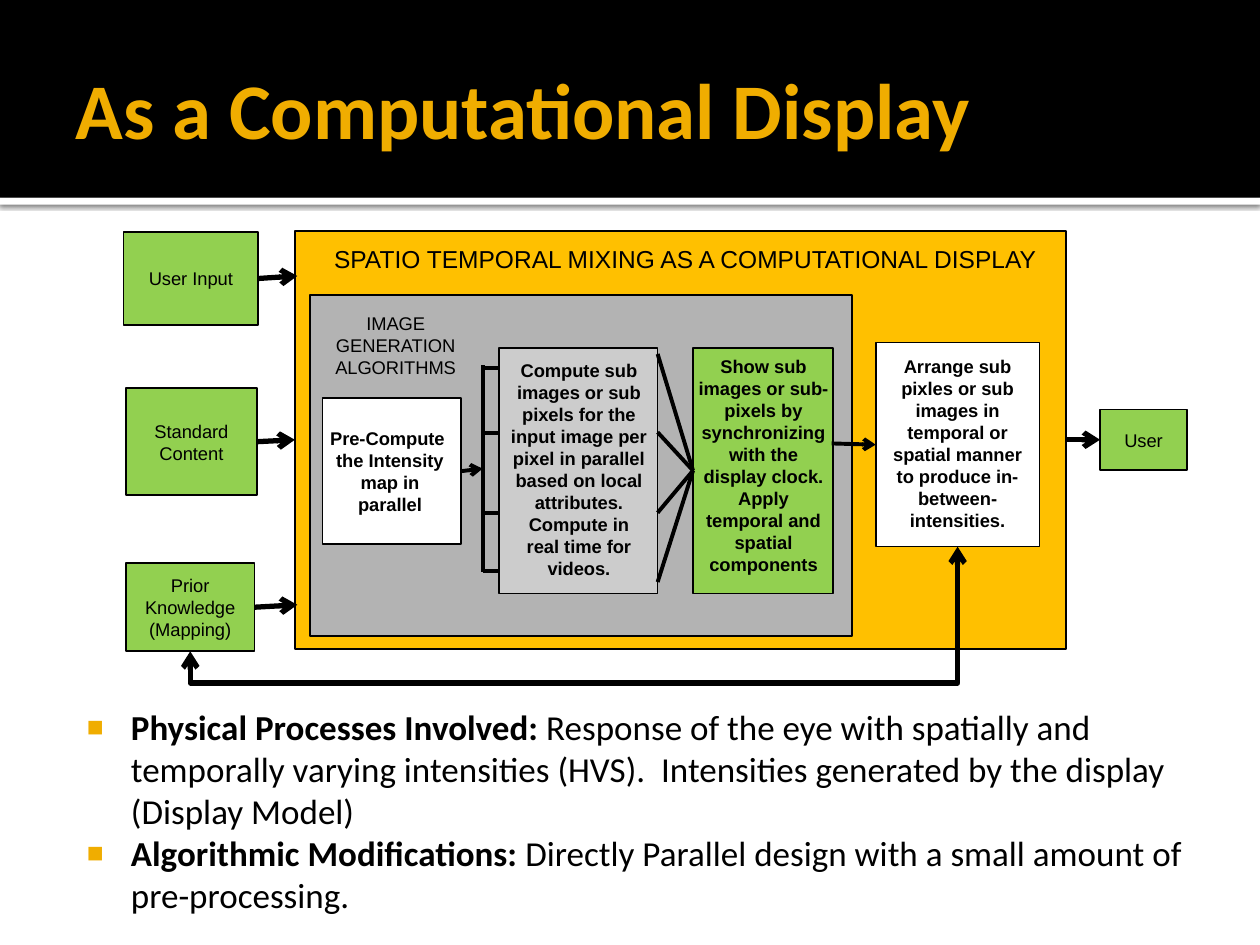
from lxml.etree import SubElement
from pptx import Presentation
from pptx.dml.color import RGBColor
from pptx.enum.shapes import MSO_CONNECTOR, MSO_SHAPE
from pptx.enum.text import MSO_ANCHOR, MSO_AUTO_SIZE, PP_ALIGN
from pptx.oxml.ns import qn
from pptx.util import Pt

BLACK = RGBColor(0x00, 0x00, 0x00)
WHITE = RGBColor(0xFF, 0xFF, 0xFF)
GOLD = RGBColor(0xF0, 0xAD, 0x00)
AMBER = RGBColor(0xFF, 0xC0, 0x00)
GREEN = RGBColor(0x92, 0xD0, 0x50)
GREY = RGBColor(0xB3, 0xB3, 0xB3)
LIGHT_GREY = RGBColor(0xCC, 0xCC, 0xCC)

TOP, LEFT, BOTTOM, RIGHT = range(4)
LABEL_FONT = {"name": "Arial", "size": Pt(10.5), "bold": False}
STEP_FONT = {**LABEL_FONT, "bold": True}
CAPTION_FONT = {**LABEL_FONT, "size": Pt(14)}
TITLE_FONT = {"name": "Calibri", "size": Pt(45), "bold": True}
BODY_FONT = {"name": "Calibri", "size": Pt(20)}


def apply(target, values):
    """Set every named attribute of the target."""
    for name, value in values.items():
        setattr(target, name, value)


def frame(left, top, width, height):
    """Turn a rectangle in points into position attributes."""
    return {"left": Pt(left), "top": Pt(top), "width": Pt(width), "height": Pt(height)}


def margins(left, top, right, bottom):
    """Turn insets in points into text frame attributes."""
    return {"margin_left": Pt(left), "margin_top": Pt(top),
            "margin_right": Pt(right), "margin_bottom": Pt(bottom)}


def style_font(font, values, color):
    """Format a font and colour it."""
    apply(font, values)
    font.color.rgb = color


def write_centred(text_frame, text, font_values):
    """Fill a text frame with centred black paragraphs."""
    text_frame.word_wrap = True
    text_frame.text = text
    for paragraph in text_frame.paragraphs:
        paragraph.alignment = PP_ALIGN.CENTER
        style_font(paragraph.font, font_values, BLACK)


def add_box(slide, place, fill, text=None, outlined=True):
    """Add a filled rectangle, optionally labelled."""
    box = slide.shapes.add_shape(MSO_SHAPE.RECTANGLE, *map(Pt, place))
    box.shadow.inherit = False
    box.fill.solid()
    box.fill.fore_color.rgb = fill
    if outlined:
        box.line.color.rgb = BLACK
        box.line.width = Pt(1)
    else:
        box.line.fill.background()
    if text:
        box.text_frame.vertical_anchor = MSO_ANCHOR.MIDDLE
        write_centred(box.text_frame, text, LABEL_FONT)
    return box


def add_text(slide, place, text, font_values):
    """Add a free-standing centred text."""
    label = slide.shapes.add_textbox(*map(Pt, place))
    write_centred(label.text_frame, text, font_values)


def add_line(slide, start, end, width=2.25, ends=(), kind=MSO_CONNECTOR.STRAIGHT):
    """Draw a line between points or (box, side) joints."""
    joints = [not isinstance(place[0], (int, float)) for place in (start, end)]
    points = [(0, 0) if joined else place for place, joined in zip((start, end), joints)]
    line = slide.shapes.add_connector(kind, *(Pt(v) for point in points for v in point))
    if joints[0]:
        line.begin_connect(*start)
    if joints[1]:
        line.end_connect(*end)
    line.line.color.rgb = BLACK
    line.line.width = Pt(width)
    outline = line.line._get_or_add_ln()
    for tag in ends:
        SubElement(outline, qn(f"a:{tag}"), type="arrow")
    SubElement(line._element.spPr, qn("a:effectLst"))
    return line


def add_feedback(slide, start, end):
    """Draw the double arrow that loops below two boxes."""
    loop = add_line(slide, start, end, 3, ("headEnd", "tailEnd"), MSO_CONNECTOR.ELBOW)
    span, drop = loop.begin_x - loop.end_x, loop.end_y - loop.begin_y
    centre_x, centre_y = (loop.begin_x + loop.end_x) // 2, (loop.begin_y + loop.end_y) // 2
    apply(loop, {"left": centre_x - drop // 2, "top": centre_y - span // 2,
                 "width": drop, "height": span})
    properties = loop._element.spPr
    transform = properties.find(qn("a:xfrm"))
    for flip in ("flipH", "flipV"):
        transform.attrib.pop(flip, None)
    transform.set("rot", "5400000")
    guides = properties.find(qn("a:prstGeom")).find(qn("a:avLst"))
    SubElement(guides, qn("a:gd"), name="adj1", fmla="val 130300")


def add_header(slide):
    """Place the black header and its shadowed edge behind the title."""
    edge = add_box(slide, (0, 113, 720, 4), WHITE, outlined=False)
    header = add_box(slide, (0, 0, 720, 113), BLACK, outlined=False)
    effects = edge._element.spPr.find(qn("a:effectLst"))
    shadow = SubElement(effects, qn("a:outerShdw"), blurRad=str(Pt(2.5)),
                        dist=str(Pt(0.8)), dir="5400000", algn="t", rotWithShape="0")
    color = SubElement(shadow, qn("a:srgbClr"), val=str(BLACK))
    SubElement(color, qn("a:alpha"), val="60000")
    tree = header._element.getparent()
    for band in (header, edge):
        tree.insert(2, band._element)


def fill_title(title):
    """Write the slide title."""
    apply(title, frame(36, 12.2, 648, 98.6))
    title.text_frame.text = "As a Computational Display"
    apply(title.text_frame, {**margins(7.2, 3.6, 3.6, 3.6), "word_wrap": True,
                             "auto_size": MSO_AUTO_SIZE.NONE,
                             "vertical_anchor": MSO_ANCHOR.MIDDLE})
    paragraph = title.text_frame.paragraphs[0]
    paragraph.alignment = PP_ALIGN.LEFT
    style_font(paragraph.font, TITLE_FONT, GOLD)


def add_bullet(paragraph):
    """Give a paragraph a gold square bullet."""
    properties = paragraph._p.get_or_add_pPr()
    properties.set("marL", str(Pt(34.5)))
    properties.set("indent", str(Pt(-25.2)))
    color = SubElement(properties, qn("a:buClr"))
    SubElement(color, qn("a:srgbClr"), val=str(GOLD))
    SubElement(properties, qn("a:buSzPct"), val="80000")
    SubElement(properties, qn("a:buFont"), typeface="Arial")
    SubElement(properties, qn("a:buChar"), char="■")


def fill_body(body, points):
    """Write bullets that open with a bold heading."""
    apply(body, frame(36, 396, 672, 144))
    text_frame = body.text_frame
    apply(text_frame, {**margins(4.3, 7.2, 7.2, 3.6), "word_wrap": True,
                       "auto_size": MSO_AUTO_SIZE.NONE, "vertical_anchor": MSO_ANCHOR.TOP})
    for index, parts in enumerate(points):
        paragraph = text_frame.add_paragraph() if index else text_frame.paragraphs[0]
        add_bullet(paragraph)
        paragraph.space_before = Pt(0)
        for text, bold in zip(parts, (True, False)):
            run = paragraph.add_run()
            run.text = text
            style_font(run.font, {**BODY_FONT, "bold": bold}, BLACK)


def add_diagram(slide):
    """Draw the processing pipeline with its inputs and user."""
    display = add_box(slide, (168.5, 131.8, 440.6, 239), AMBER)
    add_box(slide, (177.1, 168.5, 309.6, 195.1), GREY)
    user = add_box(slide, (628.6, 234, 49.7, 34.6), GREEN, "User")
    user_input = add_box(slide, (70.6, 132.5, 77, 53.3), GREEN, "User Input")
    content = add_box(slide, (72, 221.8, 74.9, 61.2), GREEN, "Standard Content")
    prior = add_box(slide, (72, 321.8, 73.4, 50.4), GREEN, "Prior Knowledge\n(Mapping)")
    precompute = add_box(slide, (184.3, 227.5, 79.2, 83.5), WHITE)
    add_box(slide, (285.1, 198.7, 90.7, 140.4), LIGHT_GREY)
    show = add_box(slide, (396, 198.7, 79.9, 140.4), GREEN)
    arrange = add_box(slide, (500.4, 195.8, 93.6, 116.6), WHITE)

    bus_x = 275.8
    add_line(slide, (bus_x, 208.8), (bus_x, 327))
    for tick_y in (210.2, 247.7, 293, 326.5):
        add_line(slide, (bus_x, tick_y), (285.1, tick_y))
    for fan_y in (202.3, 247, 293, 332.6):
        add_line(slide, (375.8, fan_y), (show, LEFT))
    for start, end, width in (
        ((user_input, RIGHT), (169.9, 157.7), 3),
        ((content, RIGHT), (display, LEFT), 3),
        ((prior, RIGHT), (169.9, 345.6), 3),
        ((display, RIGHT), (user, LEFT), 3),
        ((precompute, RIGHT), (bus_x, 267.8), 2.25),
        ((475.2, 253.4), (arrange, LEFT), 2.25),
    ):
        add_line(slide, start, end, width, ("tailEnd",))
    add_feedback(slide, (arrange, BOTTOM), (prior, BOTTOM))

    for place, text, font_values in (
        ((177.1, 136.1, 429.1, 24.5),
         "SPATIO TEMPORAL MIXING AS A COMPUTATIONAL DISPLAY", CAPTION_FONT),
        ((180, 175, 92.2, 45.4), "IMAGE GENERATION ALGORITHMS", LABEL_FONT),
        ((179.3, 240.5, 87.1, 58.3), "Pre-Compute  the Intensity map in parallel", STEP_FONT),
        ((284.4, 201.6, 92.9, 134.6),
         "Compute sub images or sub pixels for the input image per pixel in parallel "
         "based on local attributes. Compute in real time for videos.", STEP_FONT),
        ((391.7, 199.4, 89.3, 134.6),
         "Show sub images or sub-pixels by synchronizing with the display clock. "
         "Apply temporal and spatial components", STEP_FONT),
        ((501.1, 199.4, 92.2, 108.7),
         "Arrange sub pixles or sub images in temporal or spatial manner "
         "to produce in-between-intensities.", STEP_FONT),
    ):
        add_text(slide, place, text, font_values)


def main():
    """Build and save the slide."""
    deck = Presentation()
    apply(deck, {"slide_width": Pt(720), "slide_height": Pt(540)})
    slide = deck.slides.add_slide(deck.slide_layouts[1])
    add_header(slide)
    fill_title(slide.shapes.title)
    fill_body(slide.placeholders[1], (
        ("Physical Processes Involved:",
         " Response of the eye with spatially and temporally varying intensities (HVS).  "
         "Intensities generated by the display (Display Model)"),
        ("Algorithmic Modifications: ",
         "Directly Parallel design with a small amount of pre-processing."),
    ))
    add_diagram(slide)
    deck.save("out.pptx")


if __name__ == "__main__":
    main()
